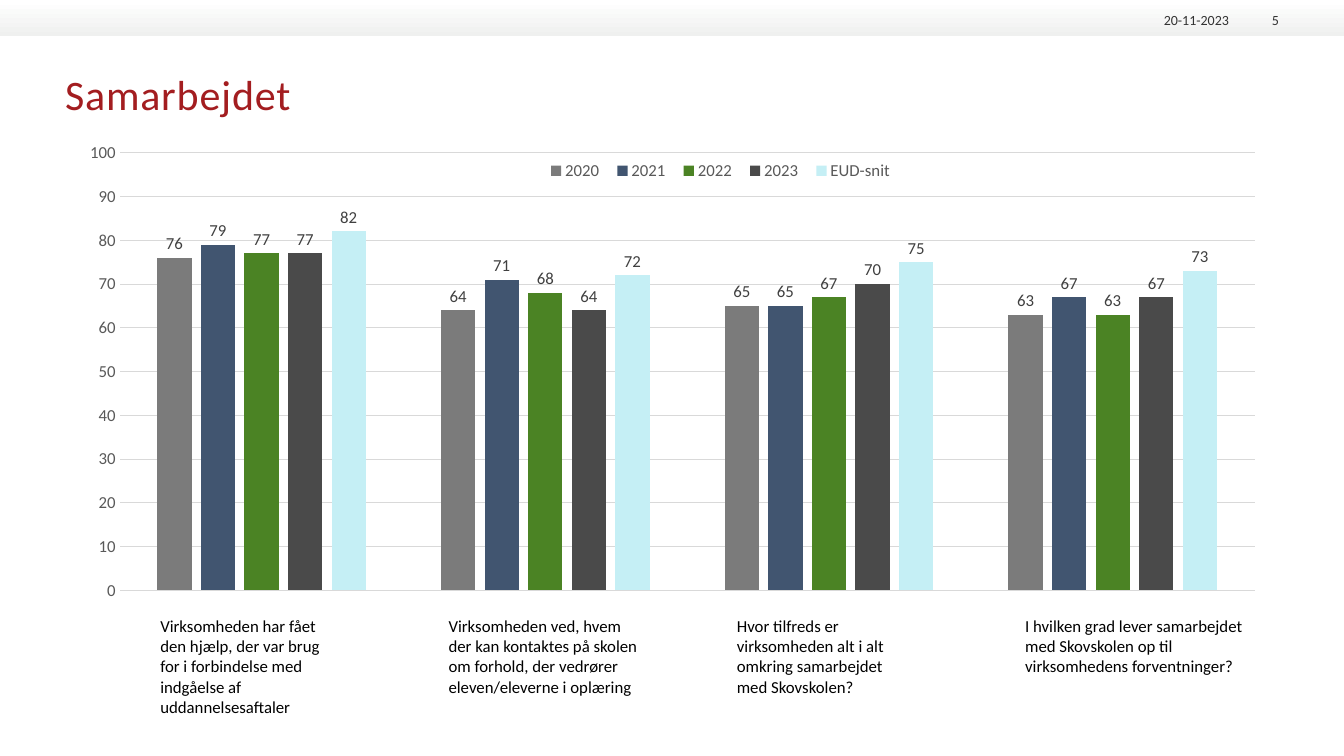
from dataclasses import dataclass

from lxml.etree import SubElement
from pptx import Presentation
from pptx.chart.data import CategoryChartData
from pptx.dml.color import RGBColor as RGB
from pptx.enum.chart import XL_CHART_TYPE as Kind, XL_LABEL_POSITION as Spot
from pptx.enum.chart import XL_LEGEND_POSITION as Side, XL_TICK_MARK as Tick
from pptx.enum.shapes import MSO_SHAPE as Shape
from pptx.enum.text import MSO_ANCHOR as Anchor, PP_ALIGN as Align
from pptx.oxml.ns import qn
from pptx.util import Cm, Pt


@dataclass(frozen=True)
class Theme:
    font: str = "Calibri"
    title: int = 30
    body: int = 12
    small: int = 10
    red: str = "A31D20"
    black: str = "000000"
    dark: str = "333333"
    label: str = "404040"
    axis: str = "595959"
    grid: str = "D9D9D9"
    band: tuple = ("FFFFFF", "EFF0EF")


THEME = Theme()
WIDTH, HEIGHT = 33.87, 19.05
SERIES = [
    ("2020", "7B7B7B", (76, 64, 65, 63)),
    ("2021", "415570", (79, 71, 65, 67)),
    ("2022", "4B8324", (77, 68, 67, 63)),
    ("2023", "4A4A4A", (77, 64, 70, 67)),
    ("EUD-snit", "C5EFF5", (82, 72, 75, 73)),
]
ASKED = [
    (4.34, "Virksomheden har fået den hjælp, der var brug for i forbindelse "
           "med indgåelse af uddannelsesaftaler"),
    (4.9, "Virksomheden ved, hvem der kan kontaktes på skolen om forhold, "
          "der vedrører eleven/eleverne i oplæring"),
    (4.34, "Hvor tilfreds er virksomheden alt i alt omkring samarbejdet "
           "med Skovskolen?"),
    (5.66, "I hvilken grad lever samarbejdet med Skovskolen op til "
           "virksomhedens forventninger?"),
]


def style(font, size, color):
    font.name = THEME.font
    font.size = Pt(size)
    font.color.rgb = RGB.from_string(color)


def write(slide, box, text, size, color, align=Align.LEFT, anchor=Anchor.TOP):
    frame = slide.shapes.add_textbox(*map(Cm, box)).text_frame
    frame.word_wrap = True
    frame.vertical_anchor = anchor
    frame.margin_left = frame.margin_right = 0
    frame.margin_top = frame.margin_bottom = 0
    para = frame.paragraphs[0]
    para.alignment = align
    run = para.add_run()
    run.text = text
    style(run.font, size, color)
    return run


def add_header(slide, box):
    left, top, width, height = box
    band = slide.shapes.add_shape(Shape.RECTANGLE, *map(Cm, box))
    band.shadow.inherit = False
    band.line.fill.background()
    band.fill.gradient()
    band.fill.gradient_angle = 270
    for stop, color in zip(band.fill.gradient_stops, THEME.band):
        stop.color.rgb = RGB.from_string(color)
    for text, wide, right in (("20-11-2023", 2.26, 2.9), ("5", 1.07, 1.64)):
        spot = (left + width - right - wide, top + 0.23, wide, 0.48)
        write(slide, spot, text, THEME.small, THEME.dark,
              Align.RIGHT, Anchor.BOTTOM)


def add_title(slide, box):
    run = write(slide, box, "Samarbejdet", THEME.title, THEME.red)
    run.font._element.set("spc", "60")


def make_layout(parent, inner, **parts):
    """Set a manual layout, given as shares of the chart's size."""
    for old in parent.findall(qn("c:layout")):
        parent.remove(old)
    layout = SubElement(parent, qn("c:layout"))
    manual = SubElement(layout, qn("c:manualLayout"))
    if inner:
        SubElement(manual, qn("c:layoutTarget")).set("val", "inner")
    for axis in "xy":
        SubElement(manual, qn(f"c:{axis}Mode")).set("val", "edge")
    for name, share in parts.items():
        SubElement(manual, qn(f"c:{name}")).set("val", str(share))
    return layout


def add_legend(chart):
    chart.has_legend = True
    legend = chart.legend
    legend.position = Side.BOTTOM
    legend.include_in_layout = False
    style(legend.font, THEME.body, THEME.axis)
    node = legend._element
    layout = make_layout(node, False, x=0.39, y=0.05, w=0.3, h=0.05)
    node.find(qn("c:overlay")).addprevious(layout)


def add_bars(slide, box):
    data = CategoryChartData(number_format="0")
    data.categories = [str(i + 1) for i in range(len(ASKED))]
    for name, _, values in SERIES:
        data.add_series(name, values)
    frame = slide.shapes.add_chart(Kind.COLUMN_CLUSTERED, *map(Cm, box), data)
    chart = frame.chart
    chart.has_title = False
    style(chart.font, THEME.small, THEME.black)
    add_legend(chart)

    chart.category_axis.visible = False
    scale = chart.value_axis
    scale.minimum_scale, scale.maximum_scale, scale.major_unit = 0, 100, 10
    scale.major_tick_mark = scale.minor_tick_mark = Tick.NONE
    scale.format.line.fill.background()
    style(scale.tick_labels.font, THEME.body, THEME.axis)
    line = scale.major_gridlines.format.line
    line.width = Pt(0.75)
    line.color.rgb = RGB.from_string(THEME.grid)

    plot = chart.plots[0]
    plot.gap_width, plot.overlap = 219, -27
    plot.vary_by_categories = False
    for bars, (_, color, _) in zip(plot.series, SERIES):
        bars.format.fill.solid()
        bars.format.fill.fore_color.rgb = RGB.from_string(color)
        labels = bars.data_labels
        labels.show_value = True
        labels.position = Spot.OUTSIDE_END
        style(labels.font, THEME.body, THEME.label)

    area = plot._element.getparent()
    area.insert(0, make_layout(area, True, x=0.045, y=0.04, w=0.935, h=0.85))


def add_captions(slide, box):
    left, top, width, height = box
    pitch = width / len(ASKED)
    for i, (wide, text) in enumerate(ASKED):
        write(slide, (left + i * pitch, top, wide, height), text,
              THEME.body, THEME.black)


def main():
    deck = Presentation()
    deck.slide_width, deck.slide_height = Cm(WIDTH), Cm(HEIGHT)
    slide = deck.slides.add_slide(deck.slide_layouts[6])
    add_header(slide, (0, 0, WIDTH, 0.92))
    add_title(slide, (1.64, 1.73, 30.59, 2.39))
    add_bars(slide, (1.64, 3.33, 30.59, 12.98))
    add_captions(slide, (4.04, 15.52, 29.06, 2.56))
    deck.save("out.pptx")


if __name__ == "__main__":
    main()
